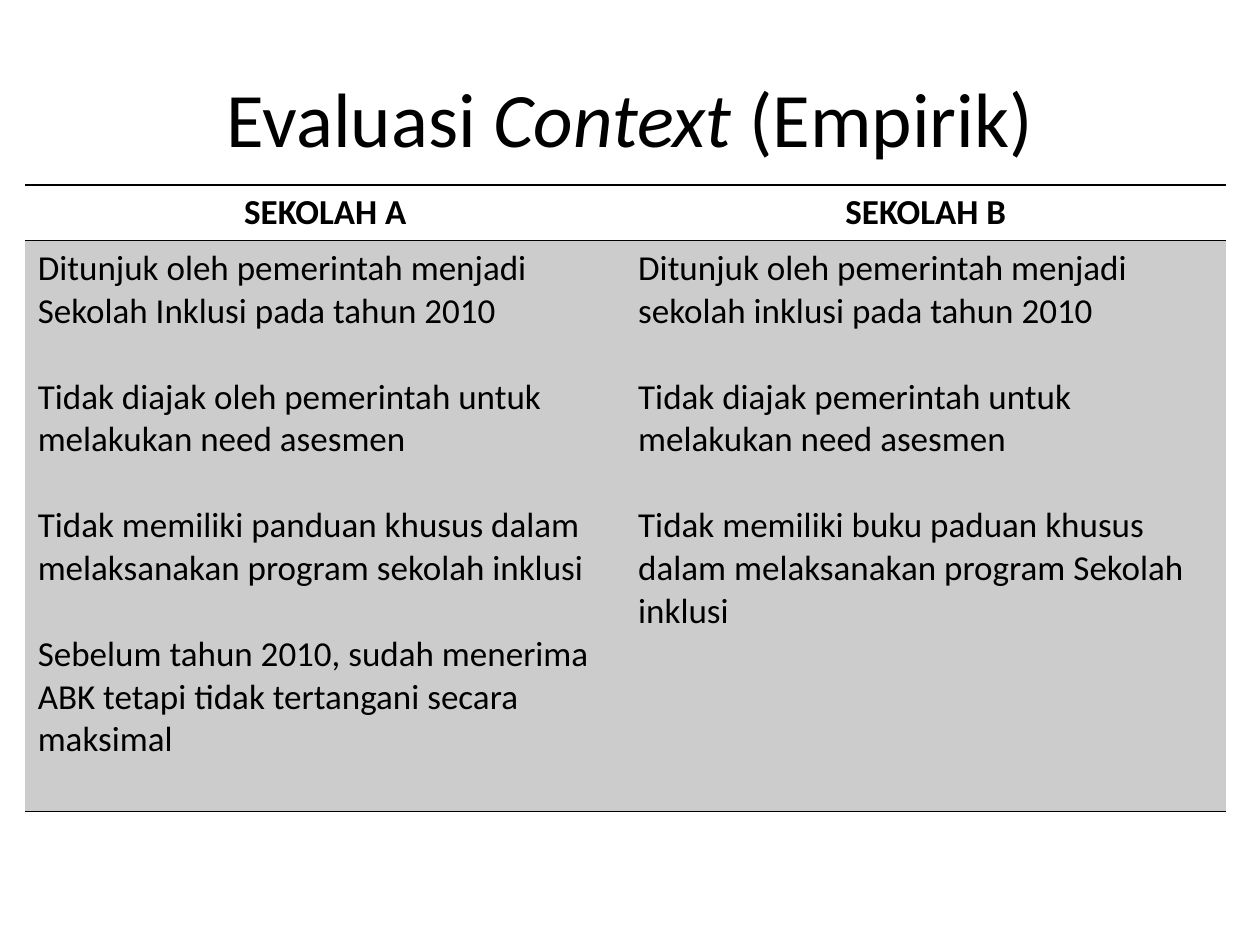
"""Build the slide comparing the empirical context evaluation of two schools."""
from dataclasses import dataclass

from lxml import etree
from pptx import Presentation
from pptx.dml.color import RGBColor
from pptx.enum import text
from pptx.oxml.ns import qn
from pptx.util import Inches, Pt

COLORS = {"ink": "000000", "body": "CCCCCC"}
FONT = "Calibri"


@dataclass
class School:
    name: str
    findings: list[str]


SCHOOLS = [
    School("SEKOLAH A", [
        "Ditunjuk oleh pemerintah menjadi Sekolah Inklusi pada tahun 2010",
        "Tidak diajak oleh pemerintah untuk melakukan need asesmen",
        "Tidak memiliki panduan khusus dalam melaksanakan program sekolah inklusi",
        "Sebelum tahun 2010, sudah menerima ABK tetapi tidak tertangani secara maksimal",
    ]),
    School("SEKOLAH B", [
        "Ditunjuk oleh pemerintah menjadi sekolah inklusi pada tahun 2010",
        "Tidak diajak pemerintah untuk melakukan need asesmen",
        "Tidak memiliki buku paduan khusus dalam melaksanakan program Sekolah inklusi",
    ]),
]


def add_run(p, content: str, *, size: float, bold: bool = False, italic: bool = False) -> None:
    r = p.add_run()
    r.text = content
    f = r.font
    f.name, f.size, f.bold, f.italic = FONT, Pt(size), bold, italic
    f.color.rgb = RGBColor.from_string(COLORS["ink"])


def set_borders(cell, visible: set[str]) -> None:
    tc_pr = cell._tc.get_or_add_tcPr()
    for i, side in enumerate("LRTB"):
        ln = etree.Element(qn(f"a:ln{side}"), w=str(Pt(1)))
        if side in visible:
            fill = etree.SubElement(ln, qn("a:solidFill"))
            etree.SubElement(fill, qn("a:srgbClr"), val=COLORS["ink"])
        else:
            etree.SubElement(ln, qn("a:noFill"))
        tc_pr.insert(i, ln)


def fill_cell(cell, lines: list[str], *, header: bool) -> None:
    tf = cell.text_frame
    for i, line in enumerate(lines):
        p = tf.add_paragraph() if i else tf.paragraphs[0]
        p.alignment = text.PP_ALIGN.CENTER if header else text.PP_ALIGN.LEFT
        if i:
            p.space_before = Pt(24.5)
        add_run(p, line, size=20, bold=header)
    if header:
        cell.fill.background()
    else:
        cell.fill.solid()
        cell.fill.fore_color.rgb = RGBColor.from_string(COLORS["body"])
    set_borders(cell, {"T", "B"})


def add_title(s) -> None:
    sp = s.shapes.title
    sp.left, sp.top, sp.width, sp.height = map(Inches, (0.5, 0.3, 9, 1.25))
    tf = sp.text_frame
    tf.vertical_anchor = text.MSO_ANCHOR.MIDDLE
    p = tf.paragraphs[0]
    p.alignment = text.PP_ALIGN.CENTER
    for part, italic in (("Evaluasi ", False), ("Context ", True), ("(Empirik)", False)):
        add_run(p, part, size=44, italic=italic)


def add_comparison(s, schools: list[School]) -> None:
    heights = (0.44, 4.53)
    frame = s.shapes.add_table(2, len(schools), Inches(0.2), Inches(1.47),
                               Inches(9.53), Inches(sum(heights)))
    table = frame.table
    table.first_row = table.horz_banding = False
    for row, height in zip(table.rows, heights):
        row.height = Inches(height)
    for col, school in enumerate(schools):
        fill_cell(table.cell(0, col), [school.name], header=True)
        fill_cell(table.cell(1, col), school.findings, header=False)


def main() -> None:
    prs = Presentation()
    prs.slide_width, prs.slide_height = Inches(10), Inches(7.5)
    s = prs.slides.add_slide(prs.slide_layouts[5])
    add_title(s)
    add_comparison(s, SCHOOLS)
    prs.save("out.pptx")


if __name__ == "__main__":
    main()
